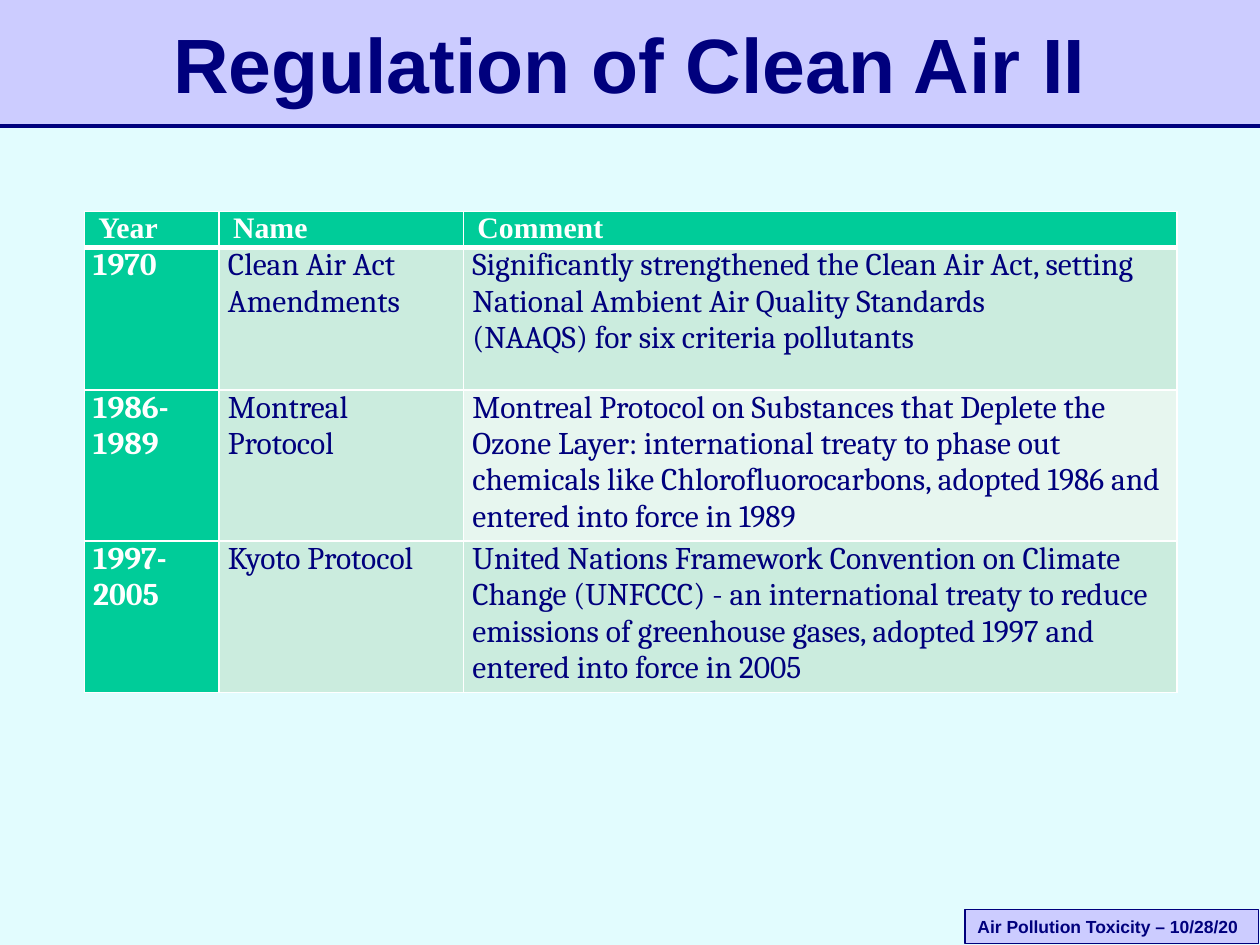
from lxml import etree
from pptx import Presentation
from pptx.dml.color import RGBColor
from pptx.enum import shapes, text
from pptx.oxml import ns
from pptx.util import Inches, Pt

NAVY, LAVENDER, WHITE = "00007D", "CCCCFF", "FFFFFF"
GREEN, MINT, PALE_MINT = "00CC99", "CBECDE", "E7F6EF"

COLUMN_WIDTHS = [1.07, 1.94, 5.66]
ROW_HEIGHTS = [0.28, 1.13, 1.2, 1.2]
REGULATIONS = [
    ["Year", "Name", "Comment"],
    ["1970", "Clean Air Act Amendments",
     "Significantly strengthened the Clean Air Act, setting National Ambient "
     "Air Quality Standards\n(NAAQS) for six criteria pollutants"],
    ["1986-1989", "Montreal Protocol",
     "Montreal Protocol on Substances that Deplete the Ozone Layer: "
     "international treaty to phase out chemicals like Chlorofluorocarbons, "
     "adopted 1986 and entered into force in 1989"],
    ["1997-2005", "Kyoto Protocol",
     "United Nations Framework Convention on Climate Change (UNFCCC) - an "
     "international treaty to reduce emissions of greenhouse gases, "
     "adopted 1997 and entered into force in 2005"],
]


def rgb(color):
    return RGBColor.from_string(color)


def fill_solid(item, color):
    item.fill.solid()
    item.fill.fore_color.rgb = rgb(color)


def write(frame, words, size, font, color, bold):
    frame.text = words
    for para in frame.paragraphs:
        for span in para.runs:
            span.font.size = Pt(size)
            span.font.name = font
            span.font.color.rgb = rgb(color)
            span.font.bold = bold


def add_panel(page, left, top, width, height, outline=None):
    panel = page.shapes.add_shape(
        shapes.MSO_SHAPE.RECTANGLE,
        Inches(left), Inches(top), Inches(width), Inches(height))
    panel.shadow.inherit = False
    fill_solid(panel, LAVENDER)
    if outline:
        panel.line.color.rgb = rgb(outline)
        panel.line.width = Pt(0.75)
    else:
        panel.line.fill.background()
    return panel


def add_rule(page, top):
    rule = page.shapes.add_connector(
        shapes.MSO_CONNECTOR.STRAIGHT, 0, Inches(top), Inches(10), Inches(top))
    rule.line.color.rgb = rgb(NAVY)
    rule.line.width = Pt(2)
    etree.SubElement(rule._element.spPr, ns.qn("a:effectLst"))


def add_title(page, words):
    box = page.shapes.add_textbox(
        Inches(0.75), Inches(0.08), Inches(8.5), Inches(0.84))
    frame = box.text_frame
    frame.word_wrap = True
    frame.vertical_anchor = text.MSO_ANCHOR.MIDDLE
    write(frame, words, 44, "Arial", NAVY, True)
    frame.paragraphs[0].alignment = text.PP_ALIGN.CENTER


def add_footer(page, words):
    frame = add_panel(page, 7.66, 7.22, 2.33, 0.27, NAVY).text_frame
    frame.word_wrap = False
    write(frame, words, 10, "Arial", NAVY, True)
    frame.paragraphs[0].alignment = text.PP_ALIGN.LEFT


def set_borders(cell, top, bottom):
    """Draw white cell borders; top and bottom are widths in points."""
    properties = cell._tc.get_or_add_tcPr()
    widths = {"a:lnL": 1, "a:lnR": 1, "a:lnT": top, "a:lnB": bottom}
    for index, (tag, width) in enumerate(widths.items()):
        line = etree.Element(ns.qn(tag), w=str(Pt(width)))
        solid = etree.SubElement(line, ns.qn("a:solidFill"))
        etree.SubElement(solid, ns.qn("a:srgbClr"), val=WHITE)
        properties.insert(index, line)


def style_cell(cell, words, row, column):
    header = row == 0
    strong = header or column == 0
    cell.margin_left = cell.margin_right = Inches(0.11 if header else 0.07)
    cell.margin_top = cell.margin_bottom = 0
    write(cell.text_frame, words, 17 if header else 18,
          "Times New Roman" if header else "Cambria",
          WHITE if strong else NAVY, strong)
    if strong:
        color = GREEN
    else:
        color = PALE_MINT if (row, column) == (2, 2) else MINT
    fill_solid(cell, color)
    set_borders(cell, 3 if row == 1 else 1, 3 if header else 1)


def add_regulation_table(page):
    table = page.shapes.add_table(
        len(ROW_HEIGHTS), len(COLUMN_WIDTHS), Inches(0.67), Inches(1.68),
        Inches(sum(COLUMN_WIDTHS)), Inches(sum(ROW_HEIGHTS))).table
    table.horz_banding = False
    for column, width in zip(table.columns, COLUMN_WIDTHS):
        column.width = Inches(width)
    for row, height in zip(table.rows, ROW_HEIGHTS):
        row.height = Inches(height)
    for row, entries in enumerate(REGULATIONS):
        for column, words in enumerate(entries):
            style_cell(table.cell(row, column), words, row, column)


def main():
    deck = Presentation()
    deck.slide_width, deck.slide_height = Inches(10), Inches(7.5)
    page = deck.slides.add_slide(deck.slide_layouts[6])
    fill_solid(page.background, "E2FCFE")
    add_panel(page, 0, 0, 10, 1)
    add_rule(page, 1)
    add_footer(page, "Air Pollution Toxicity – 10/28/20")
    add_title(page, "Regulation of Clean Air II")
    add_regulation_table(page)
    deck.save("out.pptx")


if __name__ == "__main__":
    main()
